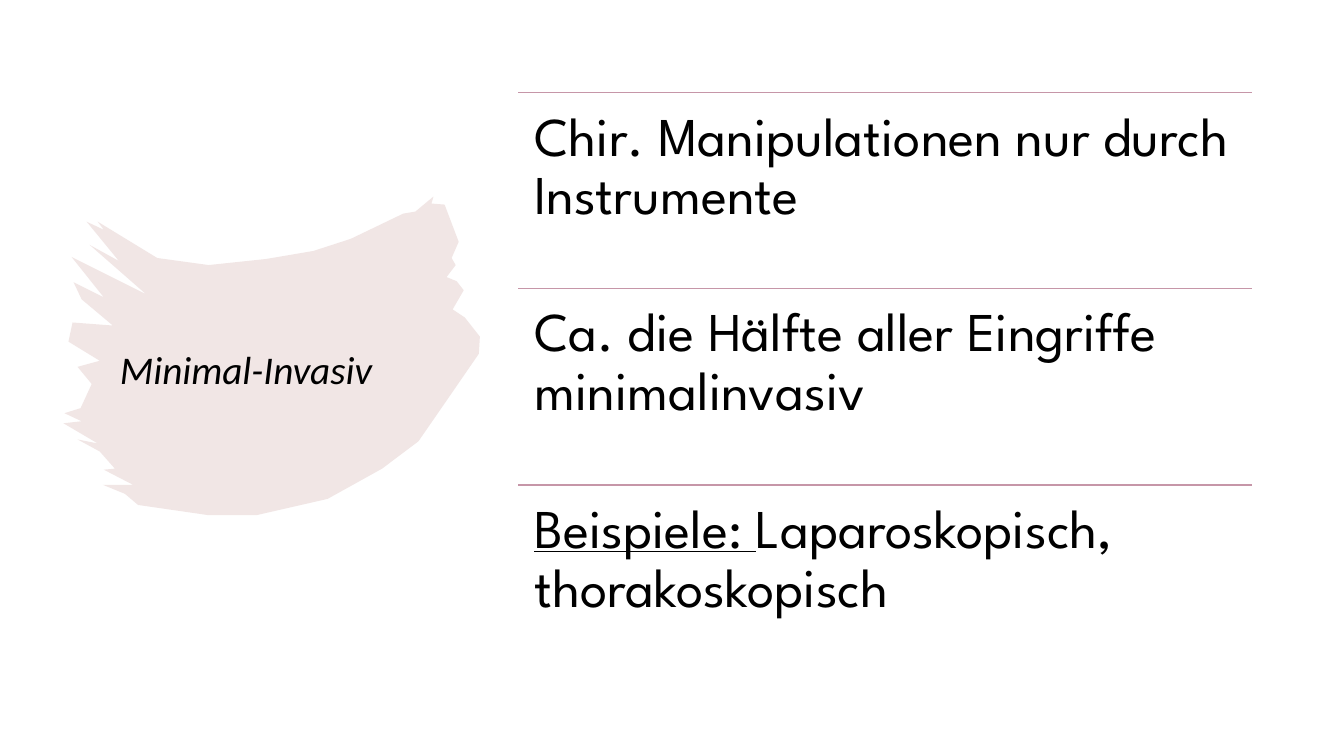
from pptx import Presentation
from pptx.dml.color import RGBColor
from pptx.enum.shapes import MSO_CONNECTOR
from pptx.enum.text import MSO_ANCHOR
from pptx.oxml.ns import qn
from pptx.util import Emu, Pt
from lxml.etree import SubElement

EMU_PER_PX = 9144  # 100 px to the inch
BLACK = RGBColor(0x00, 0x00, 0x00)
ROSE = RGBColor(0xC6, 0x96, 0xA8)
BLUSH = RGBColor(0xBA, 0x82, 0x7F)

RIGHT_EDGE = [(430, 195), (428, 202), (441, 203), (455, 240), (448, 256), (452, 263),
              (443, 275), (453, 279), (460, 288), (449, 307), (461, 315), (476, 334),
              (475, 351), (444, 396)]
LOWER_EDGE = [(415, 438), (379, 465), (325, 495), (255, 511), (206, 511), (137, 501),
              (124, 490), (102, 481)]
LEFT_BRISTLES = [(132, 481), (103, 466), (114, 465), (99, 448), (77, 436), (97, 440),
                 (63, 420), (81, 418), (64, 410), (80, 405), (91, 381), (77, 364),
                 (99, 358), (68, 339), (72, 320), (112, 323), (81, 297), (73, 280),
                 (103, 295), (71, 255), (145, 292), (89, 243), (118, 259), (86, 220)]
UPPER_EDGE = [(103, 228), (97, 220), (156, 256), (207, 263), (264, 257), (311, 249),
              (348, 237), (400, 212), (412, 210)]
BRUSH_OUTLINE = RIGHT_EDGE + LOWER_EDGE + LEFT_BRISTLES + UPPER_EDGE

LIST_LEFT, LIST_TOP, LIST_WIDTH = 514, 92, 728
TWO_ROWS_HEIGHT = 389
LIST_ROWS = [
    [("Chir. Manipulationen nur durch Instrumente", {})],
    [("Ca. die Hälfte aller Eingriffe minimalinvasiv", {})],
    [("Beispiele: ", {"underline": True}), ("Laparoskopisch, thorakoskopisch", {})],
]


def px(length):
    return Emu(length * EMU_PER_PX)


class SlideBuilder:
    """Holds the current slide and the style shared by its elements."""

    text_color = BLACK
    line_color = ROSE
    brush_color = BLUSH

    def __init__(self, slide):
        self.slide = slide

    def brush(self, outline, opacity):
        """Fill a closed outline; opacity is given in percent."""
        builder = self.slide.shapes.build_freeform(*outline[0], scale=EMU_PER_PX)
        builder.add_line_segments(outline[1:], close=True)
        shape = builder.convert_to_shape()
        shape.shadow.inherit = False
        shape.line.fill.background()
        shape.fill.solid()
        shape.fill.fore_color.rgb = self.brush_color
        color = shape._element.spPr.find(".//" + qn("a:srgbClr"))
        SubElement(color, qn("a:alpha"), val=str(opacity * 1000))

    def rule(self, left, top, width):
        connector = self.slide.shapes.add_connector(
            MSO_CONNECTOR.STRAIGHT, px(left), px(top), px(left + width), px(top))
        connector.line.color.rgb = self.line_color
        connector.line.width = Pt(1)
        SubElement(connector._element.spPr, qn("a:effectLst"))

    def text(self, box, runs, font_name, size, margins, anchor=MSO_ANCHOR.TOP):
        """Add one paragraph; margins are horizontal and vertical."""
        shape = self.slide.shapes.add_textbox(*map(px, box))
        frame = shape.text_frame
        frame.word_wrap = True
        frame.vertical_anchor = anchor
        frame.margin_left = frame.margin_right = px(margins[0])
        frame.margin_top = frame.margin_bottom = px(margins[1])
        paragraph = frame.paragraphs[0]
        paragraph.line_spacing = 0.9
        for content, emphasis in runs:
            run = paragraph.add_run()
            run.text = content
            run.font.name = font_name
            run.font.size = Pt(size)
            run.font.color.rgb = self.text_color
            for name, value in emphasis.items():
                setattr(run.font, name, value)


def main():
    presentation = Presentation()
    presentation.slide_width, presentation.slide_height = px(1333), px(750)
    slide = presentation.slides.add_slide(presentation.slide_layouts[6])
    builder = SlideBuilder(slide)

    builder.brush(BRUSH_OUTLINE, opacity=20)
    builder.text((109, 287, 329, 164), [("Minimal-Invasiv", {"italic": True})],
                 "Calibri", 28, (10, 5), MSO_ANCHOR.MIDDLE)

    for index, runs in enumerate(LIST_ROWS):
        top = LIST_TOP + index * TWO_ROWS_HEIGHT // 2
        builder.rule(LIST_LEFT, top, LIST_WIDTH)
        builder.text((LIST_LEFT, top, LIST_WIDTH, TWO_ROWS_HEIGHT // 2), runs,
                     "League Spartan", 39, (16, 16))

    presentation.save("out.pptx")


if __name__ == "__main__":
    main()
